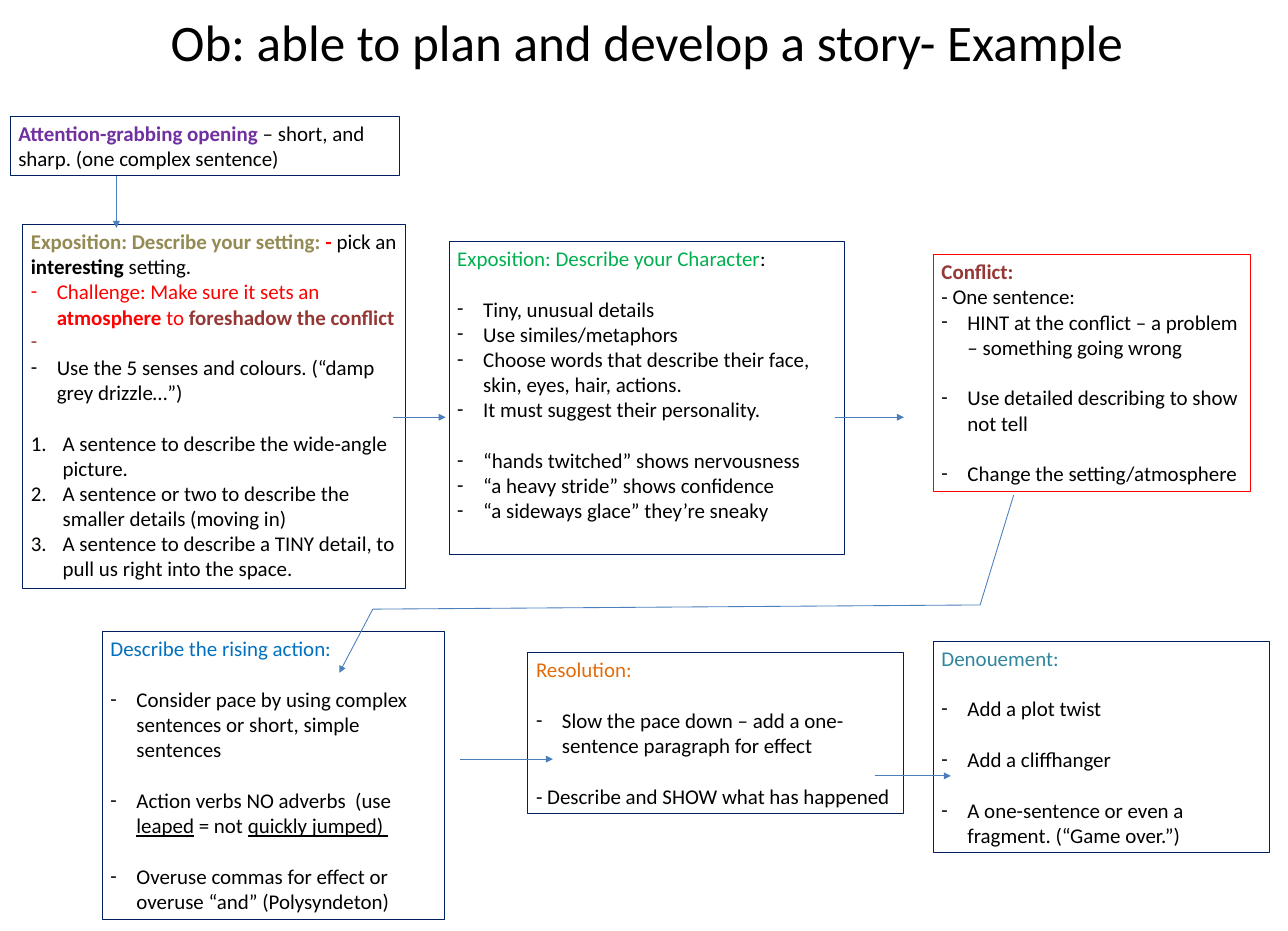
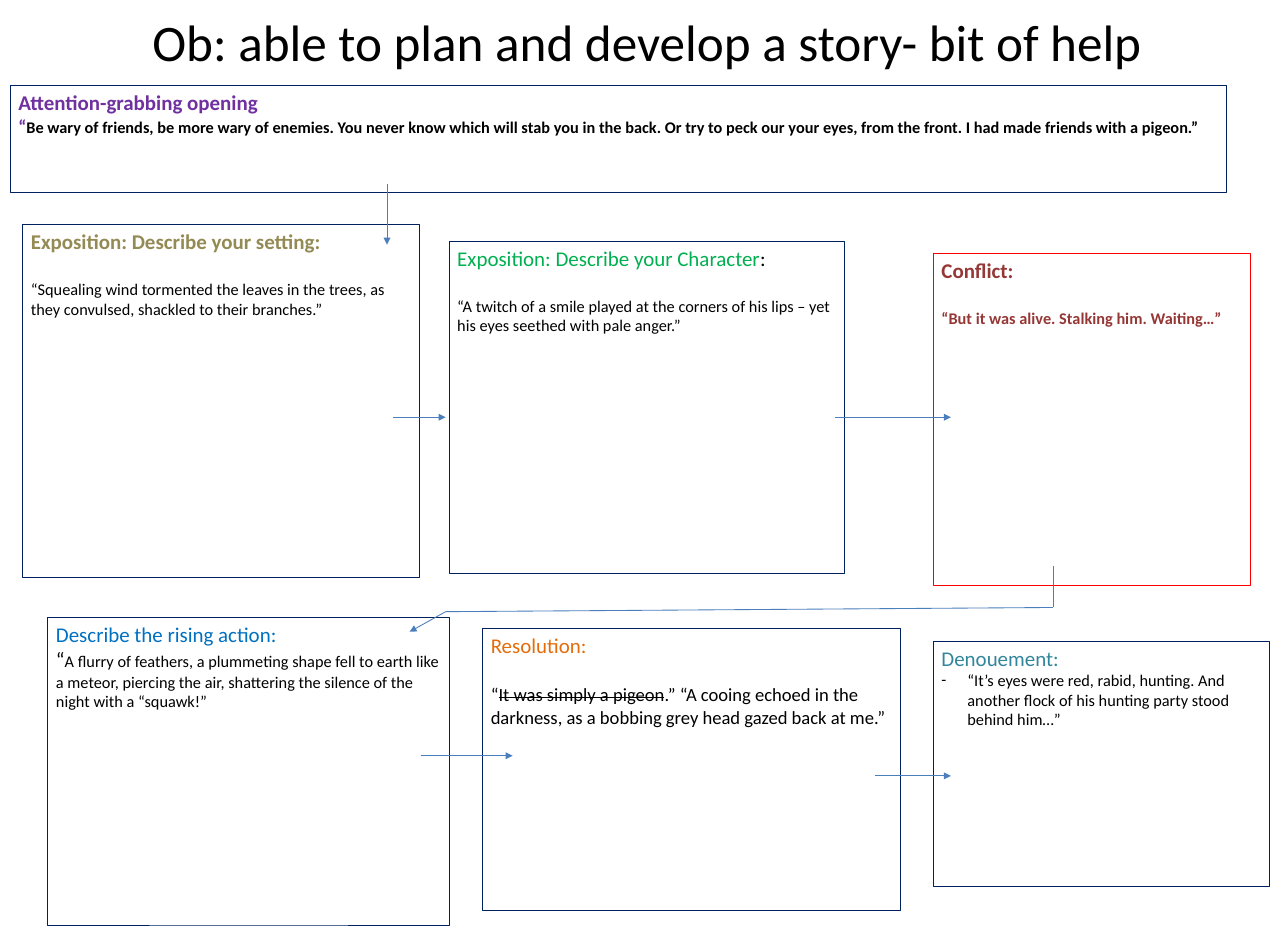
import pptx
import pptx.util
import pptx.dml.color
import pptx.enum.shapes
import pptx.enum.text
import pptx.oxml
import pptx.oxml.ns
from dataclasses import dataclass
from itertools import pairwise

Inches = pptx.util.Inches
Pt = pptx.util.Pt
RGBColor = pptx.dml.color.RGBColor

BLACK = RGBColor(0x00, 0x00, 0x00)
NAVY = RGBColor(0x00, 0x20, 0x60)
PURPLE = RGBColor(0x70, 0x30, 0xA0)
OLIVE = RGBColor(0x94, 0x8A, 0x54)
GREEN = RGBColor(0x00, 0xB0, 0x50)
BLUE = RGBColor(0x00, 0x70, 0xC0)
ORANGE = RGBColor(0xE4, 0x6C, 0x0A)
TEAL = RGBColor(0x31, 0x85, 0x9C)
RED = RGBColor(0xFF, 0x00, 0x00)
BROWN = RGBColor(0x95, 0x37, 0x35)
STEEL = RGBColor(0x4B, 0x7E, 0xBC)

FACE = "Calibri"
WIDTH = Pt(1107)
HEIGHT = Pt(800)
GAP = Pt(22)
THIN = Pt(0.75)
INDENT = {"dash": 0.31, "number": 0.38}
MARKS = {
    "dash": ['<a:buFont {} typeface="Calibri"/>', '<a:buChar {} char="-"/>'],
    "number": ['<a:buFont {} typeface="+mj-lt"/>',
               '<a:buAutoNum {} type="arabicPeriod"/>'],
}


@dataclass
class Run:
    text: str
    ink: RGBColor = None
    bold: bool = None
    size: float = None
    under: bool = None
    strike: bool = False


@dataclass
class Para:
    runs: list
    ink: RGBColor = BLACK
    bold: bool = False
    size: float = 18
    mark: str = None
    gap: bool = False


HEADS = {
    "opening": ("Attention-grabbing opening", PURPLE, True),
    "setting": ("Exposition: Describe your setting:", OLIVE, True),
    "hero": ("Exposition: Describe your Character", GREEN, False),
    "rising": ("Describe the rising action:", BLUE, False),
    "outcome": ("Resolution:", ORANGE, False),
    "ending": ("Denouement:", TEAL, False),
    "conflict": ("Conflict:", BROWN, True),
}
EDGES = {"conflict": RED}


def head(key, *rest):
    text, ink, bold = HEADS[key]
    return Para([Run(text), *rest], ink, bold)


def item(*runs, **style):
    return Para([Run(r) if isinstance(r, str) else r for r in runs], **style)


def dash(*runs, **style):
    return item(*runs, mark="dash", **style)


def step(text, **style):
    return item(text, mark="number", **style)


def xml(form):
    return pptx.oxml.parse_xml(form.format(pptx.oxml.ns.nsdecls("a")))


def write(par, para):
    if para.mark:
        props = par._p.get_or_add_pPr()
        inset = Inches(INDENT[para.mark])
        props.set("marL", str(inset))
        props.set("indent", str(-inset))
        for form in MARKS[para.mark]:
            props.append(xml(form))
    par.font.name = FACE
    par.font.size = Pt(para.size)
    par.font.bold = para.bold
    par.font.color.rgb = para.ink
    if para.gap:
        par.space_before = GAP
    for part in para.runs:
        run = par.add_run()
        run.text = part.text
        if part.ink is not None:
            run.font.color.rgb = part.ink
        if part.bold is not None:
            run.font.bold = part.bold
        if part.size:
            run.font.size = Pt(part.size)
        if part.under:
            run.font.underline = True
        if part.strike:
            run._r.get_or_add_rPr().set("strike", "sngStrike")


def panel(slide, box, paras, edge):
    shape = slide.shapes.add_textbox(*map(Inches, box))
    shape.line.color.rgb = edge
    shape.line.width = THIN
    frame = shape.text_frame
    frame.word_wrap = True
    for i, para in enumerate(paras):
        write(frame.add_paragraph() if i else frame.paragraphs[0], para)


def route(slide, points):
    for start, end in pairwise(points):
        line = slide.shapes.add_connector(
            pptx.enum.shapes.MSO_CONNECTOR.STRAIGHT,
            *map(Inches, (*start, *end)))
        line.line.color.rgb = STEEL
        line.line.width = THIN
        props = line._element.spPr
        if end == points[-1]:
            props.find(pptx.oxml.ns.qn("a:ln")).append(
                xml('<a:tailEnd {} type="triangle"/>'))
        props.append(xml("<a:effectLst {}/>"))


def title(slide, text, box):
    shape = slide.shapes.title
    shape.left, shape.top, shape.width, shape.height = map(Inches, box)
    frame = shape.text_frame
    frame.text = text
    frame.vertical_anchor = pptx.enum.text.MSO_ANCHOR.MIDDLE
    par = frame.paragraphs[0]
    par.alignment = pptx.enum.text.PP_ALIGN.CENTER
    par.font.name = FACE
    par.font.size = Pt(44)
    par.font.color.rgb = BLACK


def plan(deck, name, panels, routes):
    slide = deck.slides.add_slide(deck.slide_layouts[5])
    title(slide, name, (0.81, -0.44, 13.84, 1.85))
    for key, (box, paras) in panels.items():
        panel(slide, box, paras, EDGES.get(key, NAVY))
    for points in routes + SHARED:
        route(slide, points)


SHARED = [
    [(4.69, 4.98), (5.32, 4.98)],
    [(10.44, 9.26), (11.35, 9.26)],
]

GUIDE = {
    "opening": ((0.12, 1.39, 4.65, 0.71), [
        head("opening", Run(" – short, and sharp. (one complex sentence)",
                            BLACK, False)),
    ]),
    "setting": ((0.27, 2.68, 4.57, 4.34), [
        head("setting", Run(" - ", RED), Run("pick an ", BLACK, False),
             Run("interesting", BLACK), Run(" setting.", BLACK, False)),
        dash("Challenge: Make sure it sets an ", Run("atmosphere", bold=True),
             " to ", Run("foreshadow the conflict", BROWN, True), ink=RED),
        dash(Run(" ", BROWN, True), ink=BROWN, bold=True),
        dash("Use the 5 senses and colours. (“damp grey drizzle…”)"),
        step("A sentence to describe the wide-angle picture.", gap=True),
        step("A sentence or two to describe the smaller details (moving in)"),
        step("A sentence to describe a TINY detail, to pull us right into "
             "the space."),
    ]),
    "hero": ((5.36, 2.88, 4.72, 3.74), [
        head("hero", Run(":", BLACK)),
        dash("Tiny, unusual details", gap=True),
        dash("Use similes/metaphors"),
        dash("Choose words that describe their face, skin, eyes, hair, "
             "actions."),
        dash("It must suggest their personality."),
        dash("“hands twitched” shows nervousness", gap=True),
        dash("“a heavy stride” shows confidence"),
        dash("“a sideways glace” they’re sneaky"),
    ]),
    "rising": ((1.22, 7.54, 4.09, 3.43), [
        head("rising"),
        dash("Consider pace by using complex sentences or short, simple "
             "sentences", gap=True),
        dash("Action verbs NO adverbs  (use ", Run("leaped", under=True),
             " = not ", Run("quickly jumped) ", under=True), gap=True),
        dash("Overuse commas for effect or overuse “and” (Polysyndeton)",
             gap=True),
    ]),
    "outcome": ((6.3, 7.79, 4.49, 1.92), [
        head("outcome"),
        dash("Slow the pace down – add a one-sentence paragraph for effect",
             gap=True),
        item("- Describe and SHOW what has happened", gap=True),
    ]),
    "ending": ((11.14, 7.65, 4.01, 2.52), [
        head("ending"),
        dash("Add a plot twist", gap=True),
        dash("Add a cliffhanger", gap=True),
        dash("A one-sentence or even a fragment. (“Game over.”)", gap=True),
    ]),
    "conflict": ((11.14, 3.04, 3.79, 2.83), [
        head("conflict"),
        item("- One sentence:"),
        dash("HINT at the conflict – a problem – something going wrong"),
        dash("Use detailed describing to show not tell", gap=True),
        dash("Change the setting/atmosphere", gap=True),
    ]),
}

HELP = {
    "opening": ((0.12, 1.02, 14.52, 1.28), [
        head("opening"),
        item(Run("“", PURPLE, size=16),
             "Be wary of friends, be more wary of enemies. You never know "
             "which will stab you in the back. Or try to peck our your eyes, "
             "from the front. I had made friends with a pigeon.”",
             bold=True, size=14),
    ]),
    "setting": ((0.27, 2.68, 4.74, 4.21), [
        head("setting"),
        item("“Squealing wind tormented the leaves in the trees, as they "
             "convulsed, shackled to their branches.”", size=14, gap=True),
    ]),
    "hero": ((5.36, 2.88, 4.72, 3.97), [
        head("hero", Run(":", BLACK)),
        item("“A twitch of a smile played at the corners of his lips – yet "
             "his eyes seethed with pale anger.”", size=14, gap=True),
    ]),
    "rising": ((0.57, 7.37, 4.8, 3.67), [
        head("rising"),
        item(Run("“", size=18),
             "A flurry of feathers, a plummeting shape fell to earth like a "
             "meteor, piercing the air, shattering the silence of the night "
             "with a “squawk!”", size=14),
    ]),
    "outcome": ((5.76, 7.5, 4.99, 3.37), [
        head("outcome"),
        item("“", Run("It was simply a pigeon", strike=True),
             ".” “A cooing echoed in the darkness, as a bobbing grey head "
             "gazed back at me.”", size=16, gap=True),
    ]),
    "ending": ((11.14, 7.65, 4.01, 2.93), [
        head("ending"),
        dash("“It’s eyes were red, rabid, hunting. And another flock of his "
             "hunting party stood behind him…”", size=14),
    ]),
    "conflict": ((11.14, 3.02, 3.79, 3.97), [
        head("conflict"),
        item("“But it was alive. Stalking him. Waiting…”",
             ink=BROWN, bold=True, size=14, gap=True),
    ]),
}


def main():
    deck = pptx.Presentation()
    deck.slide_width = WIDTH
    deck.slide_height = HEIGHT
    deck.element.sldSz.attrib.pop("type", None)
    plan(deck, "Ob: able to plan and develop a story- Example", GUIDE, [
        [(1.39, 2.1), (1.39, 2.72)],
        [(12.1, 5.91), (11.7, 7.22), (4.45, 7.27), (4.05, 8.03)],
        [(5.49, 9.06), (6.6, 9.06)],
        [(9.97, 4.98), (10.79, 4.98)],
    ])
    plan(deck, "Ob: able to plan and develop a story- bit of help", HELP, [
        [(4.62, 2.2), (4.62, 2.92)],
        [(12.57, 6.76), (12.57, 7.25), (5.32, 7.3), (4.89, 7.54)],
        [(5.02, 9.02), (6.12, 9.02)],
        [(9.97, 4.98), (11.35, 4.98)],
    ])
    deck.save("out.pptx")


if __name__ == "__main__":
    main()
